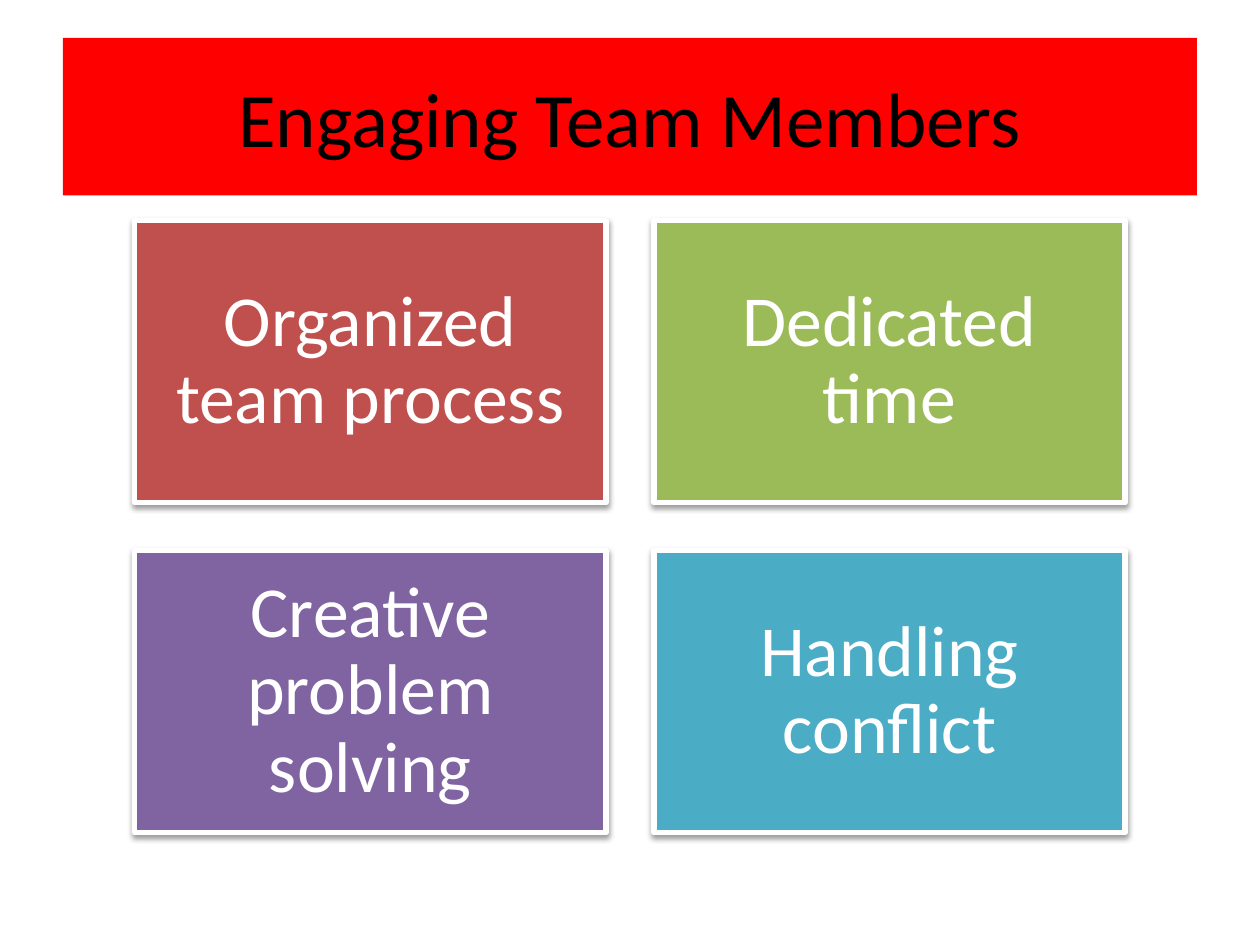
from lxml.etree import SubElement
from pptx import Presentation
from pptx.dml.color import RGBColor
from pptx.enum.shapes import MSO_SHAPE
from pptx.enum.text import MSO_ANCHOR, PP_ALIGN
from pptx.oxml.ns import qn
from pptx.util import Inches, Pt

TITLE = "Engaging Team Members"
CARDS = [
    ("Organized team process", "C0504D"),
    ("Dedicated time", "9BBB59"),
    ("Creative problem solving", "8064A2"),
    ("Handling conflict", "4BACC6"),
]
COLUMNS = 2
CARD_WIDTH, CARD_HEIGHT = 3.74, 2.24
GRID_LEFT, GRID_TOP, GAP = 1.07, 1.75, 0.38


def color(value):
    return RGBColor.from_string(value)


def add_box(page, text, left, top, width, height, *, fill, size,
            text_color="FFFFFF", line=None, inset=0.1, spacing=1.0):
    box = page.shapes.add_shape(
        MSO_SHAPE.RECTANGLE, *map(Inches, (left, top, width, height)))
    box.shadow.inherit = False
    box.fill.solid()
    box.fill.fore_color.rgb = color(fill)
    if line:
        box.line.color.rgb = color(line)
        box.line.width = Pt(3)
    else:
        box.line.fill.background()

    frame = box.text_frame
    frame.word_wrap = True
    frame.vertical_anchor = MSO_ANCHOR.MIDDLE
    frame.margin_left = frame.margin_right = Inches(inset)
    frame.margin_top = frame.margin_bottom = Inches(min(inset, 0.17))
    para = frame.paragraphs[0]
    para.alignment = PP_ALIGN.CENTER
    para.line_spacing = spacing
    span = para.add_run()
    span.text = text
    span.font.name = "Calibri"
    span.font.size = Pt(size)
    span.font.color.rgb = color(text_color)
    return box


def add_drop_shadow(box):
    effects = box.element.spPr.find(qn("a:effectLst"))
    shadow = SubElement(effects, qn("a:outerShdw"), blurRad=str(Pt(3.1)),
                        dist=str(Pt(1.6)), dir="5400000", rotWithShape="0")
    shade = SubElement(shadow, qn("a:srgbClr"), val="000000")
    SubElement(shade, qn("a:alpha"), val="38000")


def main():
    deck = Presentation()
    deck.slide_width, deck.slide_height = Inches(10), Inches(7.5)
    page = deck.slides.add_slide(deck.slide_layouts[6])

    add_box(page, TITLE, 0.5, 0.3, 9, 1.25,
            fill="FF0000", size=44, text_color="000000")
    for index, (text, fill) in enumerate(CARDS):
        row, column = divmod(index, COLUMNS)
        card = add_box(page, text,
                       GRID_LEFT + column * (CARD_WIDTH + GAP),
                       GRID_TOP + row * (CARD_HEIGHT + GAP),
                       CARD_WIDTH, CARD_HEIGHT, fill=fill, size=41,
                       line="FFFFFF", inset=0.17, spacing=0.9)
        add_drop_shadow(card)

    deck.save("out.pptx")


if __name__ == "__main__":
    main()
